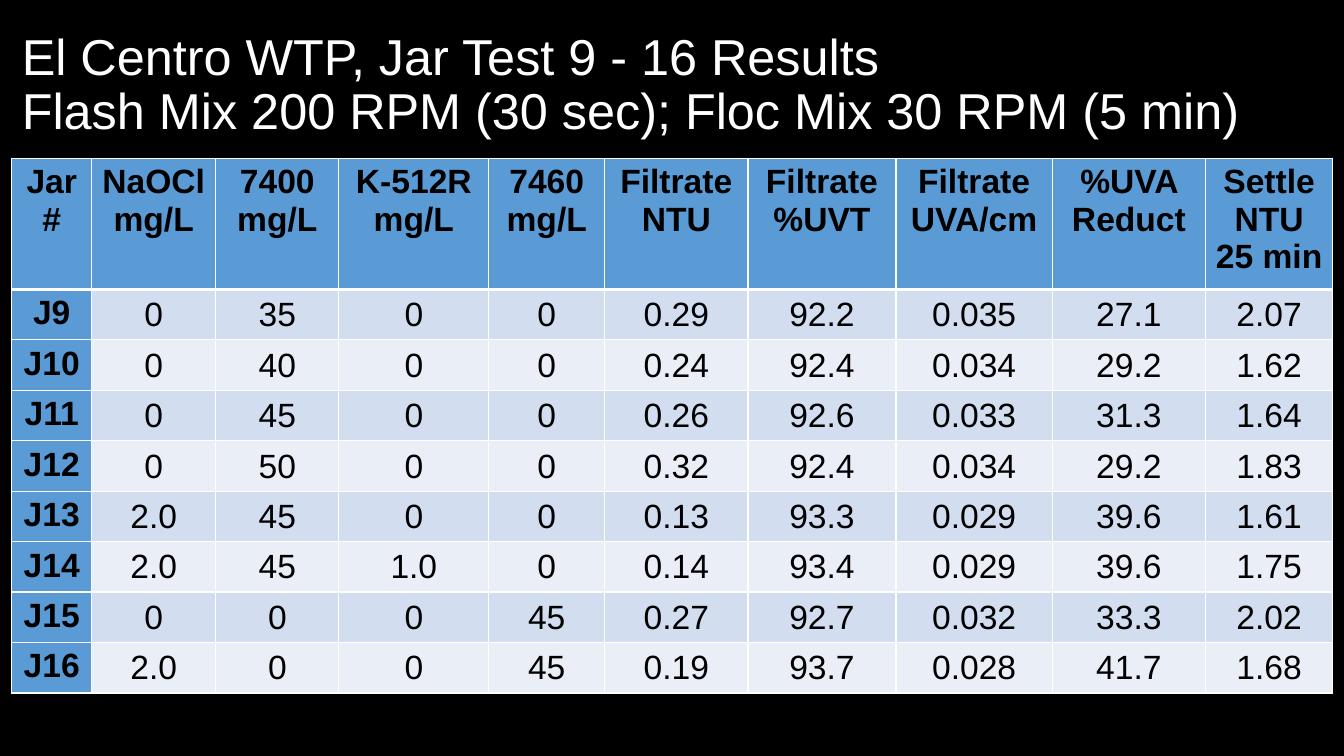
from lxml import etree
from pptx import Presentation
from pptx.dml.color import RGBColor
from pptx.enum import text
from pptx.oxml import ns
from pptx.util import Cm, Pt

BLACK = RGBColor(0x00, 0x00, 0x00)
WHITE = RGBColor(0xFF, 0xFF, 0xFF)
HEADER_BLUE = RGBColor(0x5B, 0x9B, 0xD5)
BAND_COLOURS = (RGBColor(0xD2, 0xDE, 0xEF), RGBColor(0xEA, 0xEF, 0xF7))

TITLE = ("El Centro WTP, Jar Test 9 - 16 Results\v"
         "Flash Mix 200 RPM (30 sec); Floc Mix 30 RPM (5 min)")
COLUMN_WIDTHS = (2.01, 3.13, 3.1, 3.78, 2.92, 3.61, 3.73, 3.94, 3.86, 3.21)
ROW_HEIGHT = 1.04  # rows grow to fit their text
ROWS = (
    ("Jar#", "NaOCl\nmg/L", "7400\nmg/L", "K-512R\nmg/L", "7460\nmg/L",
     "Filtrate\nNTU", "Filtrate\n%UVT", "Filtrate\nUVA/cm", "%UVA Reduct",
     "Settle\nNTU\n25 min"),
    ("J9", "0", "35", "0", "0", "0.29", "92.2", "0.035", "27.1", "2.07"),
    ("J10", "0", "40", "0", "0", "0.24", "92.4", "0.034", "29.2", "1.62"),
    ("J11", "0", "45", "0", "0", "0.26", "92.6", "0.033", "31.3", "1.64"),
    ("J12", "0", "50", "0", "0", "0.32", "92.4", "0.034", "29.2", "1.83"),
    ("J13", "2.0", "45", "0", "0", "0.13", "93.3", "0.029", "39.6", "1.61"),
    ("J14", "2.0", "45", "1.0", "0", "0.14", "93.4", "0.029", "39.6", "1.75"),
    ("J15", "0", "0", "0", "45", "0.27", "92.7", "0.032", "33.3", "2.02"),
    ("J16", "2.0", "0", "0", "45", "0.19", "93.7", "0.028", "41.7", "1.68"),
)


def write_text(frame, words, size, colour, bold=False,
               align=text.PP_ALIGN.LEFT, line_spacing=None):
    frame.text = words
    for paragraph in frame.paragraphs:
        paragraph.alignment = align
        paragraph.line_spacing = line_spacing
        for run in paragraph.runs:
            run.font.name = "Arial"
            run.font.size = Pt(size)
            run.font.bold = bold
            run.font.color.rgb = colour


def add_border(cell, side, points):
    """Draw one white cell edge; side is L, R, T or B."""
    line = etree.SubElement(cell._tc.get_or_add_tcPr(), ns.qn(f"a:ln{side}"),
                            w=str(Pt(points)))
    fill = etree.SubElement(line, ns.qn("a:solidFill"))
    etree.SubElement(fill, ns.qn("a:srgbClr"), val=str(WHITE))


presentation = Presentation()
presentation.slide_width = Cm(33.87)
presentation.slide_height = Cm(19.05)
slide = presentation.slides.add_slide(presentation.slide_layouts[6])
slide.background.fill.solid()
slide.background.fill.fore_color.rgb = BLACK

title = slide.shapes.add_textbox(Cm(0.3), Cm(0.33), Cm(33.1), Cm(3.68))
title.text_frame.word_wrap = True
title.text_frame.vertical_anchor = text.MSO_ANCHOR.MIDDLE
write_text(title.text_frame, TITLE, size=36, colour=WHITE, line_spacing=0.9)

table = slide.shapes.add_table(
    len(ROWS), len(COLUMN_WIDTHS), Cm(0.3), Cm(3.99),
    Cm(sum(COLUMN_WIDTHS)), Cm(ROW_HEIGHT * len(ROWS))).table
table.first_col = True
for column, width in zip(table.columns, COLUMN_WIDTHS):
    column.width = Cm(width)

for row_index, values in enumerate(ROWS):
    table.rows[row_index].height = Cm(ROW_HEIGHT)
    for column_index, value in enumerate(values):
        cell = table.cell(row_index, column_index)
        is_heading = row_index == 0 or column_index == 0
        write_text(cell.text_frame, value, size=24, colour=BLACK,
                   bold=is_heading, align=text.PP_ALIGN.CENTER)
        if not is_heading:
            cell.vertical_anchor = text.MSO_ANCHOR.MIDDLE
            cell.margin_left = cell.margin_right = cell.margin_top = Cm(0.02)
            cell.margin_bottom = Cm(0)
        add_border(cell, "L", 1)
        add_border(cell, "R", 1)
        add_border(cell, "T", 3 if row_index == 1 else 1)
        add_border(cell, "B", 3 if row_index == 0 else 1)
        cell.fill.solid()
        cell.fill.fore_color.rgb = (
            HEADER_BLUE if is_heading else BAND_COLOURS[(row_index - 1) % 2])

presentation.save("out.pptx")
